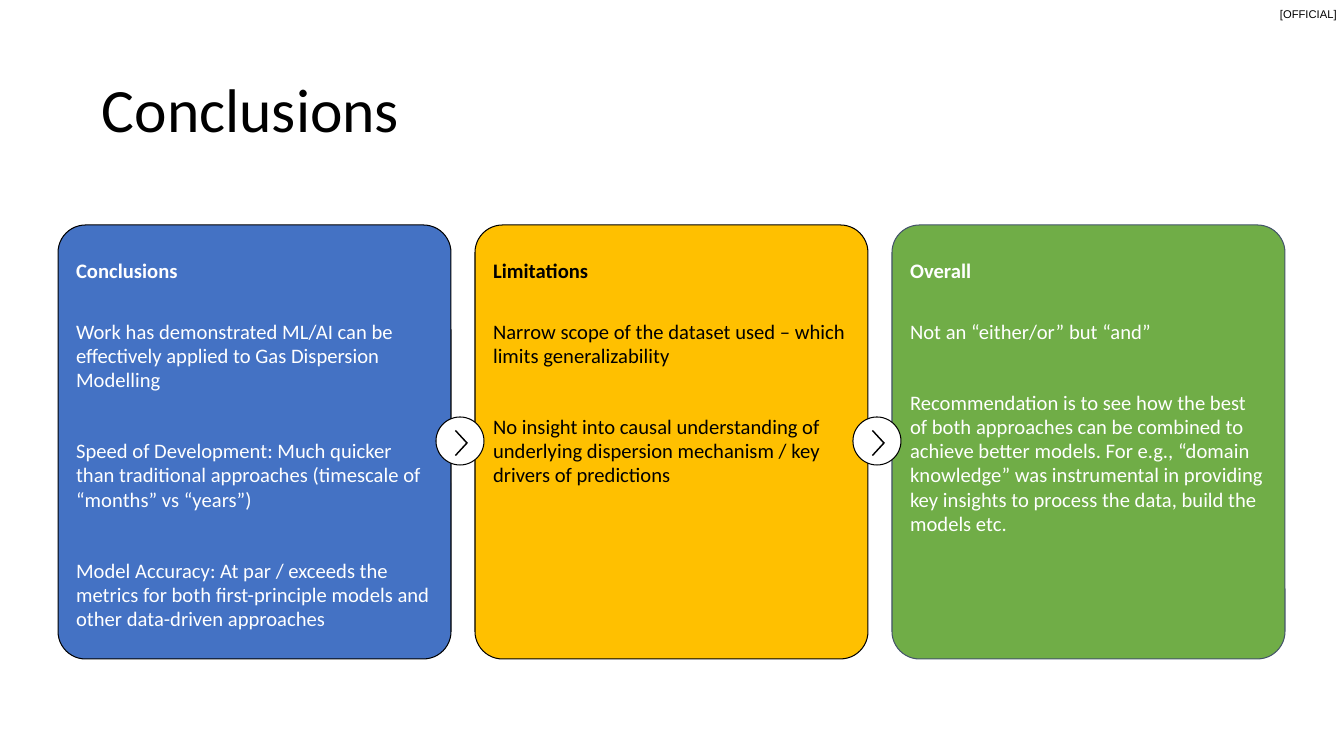
from pptx import Presentation
from pptx.dml.color import RGBColor
from pptx.enum.shapes import MSO_SHAPE as SHAPE
from pptx.enum.text import MSO_ANCHOR as ANCHOR, PP_ALIGN as ALIGN
from pptx.util import Pt

EMU_PER_PX = 914400 / 100.8
COLORS = {
    "black": "000000",
    "white": "FFFFFF",
    "blue": "4472C4",
    "amber": "FFC000",
    "green": "70AD47",
    "slate": "44546A",
}
CARD_LEFT, CARD_TOP, CARD_W, CARD_H, CARD_STEP = 58, 225, 393, 434, 417
BADGE_LEFT, BADGE_TOP, BADGE_SIZE = 436, 417, 48
CHEVRON = [(19, 14), (20, 13), (32, 26), (20, 39), (19, 38), (30, 26)]
CARDS = [
    ("Conclusions", "blue", "black", "white", [
        "Work has demonstrated ML/AI can be effectively applied to Gas "
        "Dispersion Modelling",
        "Speed of Development: Much quicker than traditional approaches "
        "(timescale of “months” vs “years”)",
        "Model Accuracy: At par / exceeds the metrics for both "
        "first-principle models and other data-driven approaches",
    ]),
    ("Limitations", "amber", "black", "black", [
        "Narrow scope of the dataset used – which limits generalizability",
        "No insight into causal understanding of underlying dispersion "
        "mechanism / key drivers of predictions",
    ]),
    ("Overall", "green", "slate", "white", [
        "Not an “either/or” but “and”",
        "Recommendation is to see how the best of both approaches can be "
        "combined to achieve better models. For e.g., “domain knowledge” was "
        "instrumental in providing key insights to process the data, build "
        "the models etc.",
    ]),
]


def px(n):
    return round(n * EMU_PER_PX)


def rgb(name):
    return RGBColor.from_string(COLORS[name])


def set_margins(tf, left, top, right, bottom):
    tf.margin_left, tf.margin_top = px(left), px(top)
    tf.margin_right, tf.margin_bottom = px(right), px(bottom)


def add_run(p, text, size, color, font="Calibri", bold=False):
    r = p.add_run()
    r.text = text
    r.font.name = font
    r.font.size = Pt(size)
    r.font.bold = bold
    r.font.color.rgb = rgb(color)


def style(sp, fill, line=None):
    sp.shadow.inherit = False
    sp.fill.solid()
    sp.fill.fore_color.rgb = rgb(fill)
    if line:
        sp.line.color.rgb = rgb(line)
        sp.line.width = Pt(0.75)
    else:
        sp.line.fill.background()


def add_label(s, x, y, w, h, text, size, font):
    tf = s.shapes.add_textbox(px(x), px(y), px(w), px(h)).text_frame
    add_run(tf.paragraphs[0], text, size, "black", font)
    return tf


def add_card(s, x, heading, fill, line, color, points):
    sp = s.shapes.add_shape(SHAPE.ROUNDED_RECTANGLE, px(x), px(CARD_TOP),
                            px(CARD_W), px(CARD_H))
    sp.adjustments[0] = 0.07
    style(sp, fill, line)
    tf = sp.text_frame
    tf.word_wrap = True
    tf.vertical_anchor = ANCHOR.TOP
    set_margins(tf, 10, 26, 10, 5)
    for i, text in enumerate([heading] + points):
        p = tf.paragraphs[0] if i == 0 else tf.add_paragraph()
        p.alignment = ALIGN.LEFT
        p.line_spacing = 0.98
        p.space_before = Pt((0, 26)[i] if i < 2 else 33.5)
        add_run(p, text, 14.7, color, bold=i == 0)


def add_badge(s, x, y):
    sp = s.shapes.add_shape(SHAPE.OVAL, px(x), px(y),
                            px(BADGE_SIZE), px(BADGE_SIZE))
    style(sp, "white", "black")
    start, *rest = [(x + dx, y + dy) for dx, dy in CHEVRON]
    builder = s.shapes.build_freeform(*start, scale=EMU_PER_PX)
    builder.add_line_segments(rest, close=True)
    style(builder.convert_to_shape(), "black")


def main():
    prs = Presentation()
    prs.slide_width, prs.slide_height = px(1344), px(756)
    s = prs.slides.add_slide(prs.slide_layouts[6])

    tf = add_label(s, 1280, 7, 60, 13, "[OFFICIAL]", 8, "Arial")
    set_margins(tf, 0, 0, 0, 0)
    tf.word_wrap = False

    tf = add_label(s, 92, 40, 1159, 146, "Conclusions", 44, "Calibri")
    tf.word_wrap = True
    tf.vertical_anchor = ANCHOR.MIDDLE
    tf.paragraphs[0].line_spacing = 0.9

    for i, card in enumerate(CARDS):
        add_card(s, CARD_LEFT + i * CARD_STEP, *card)
    for i in range(len(CARDS) - 1):
        add_badge(s, BADGE_LEFT + i * CARD_STEP, BADGE_TOP)

    prs.save("out.pptx")


if __name__ == "__main__":
    main()
